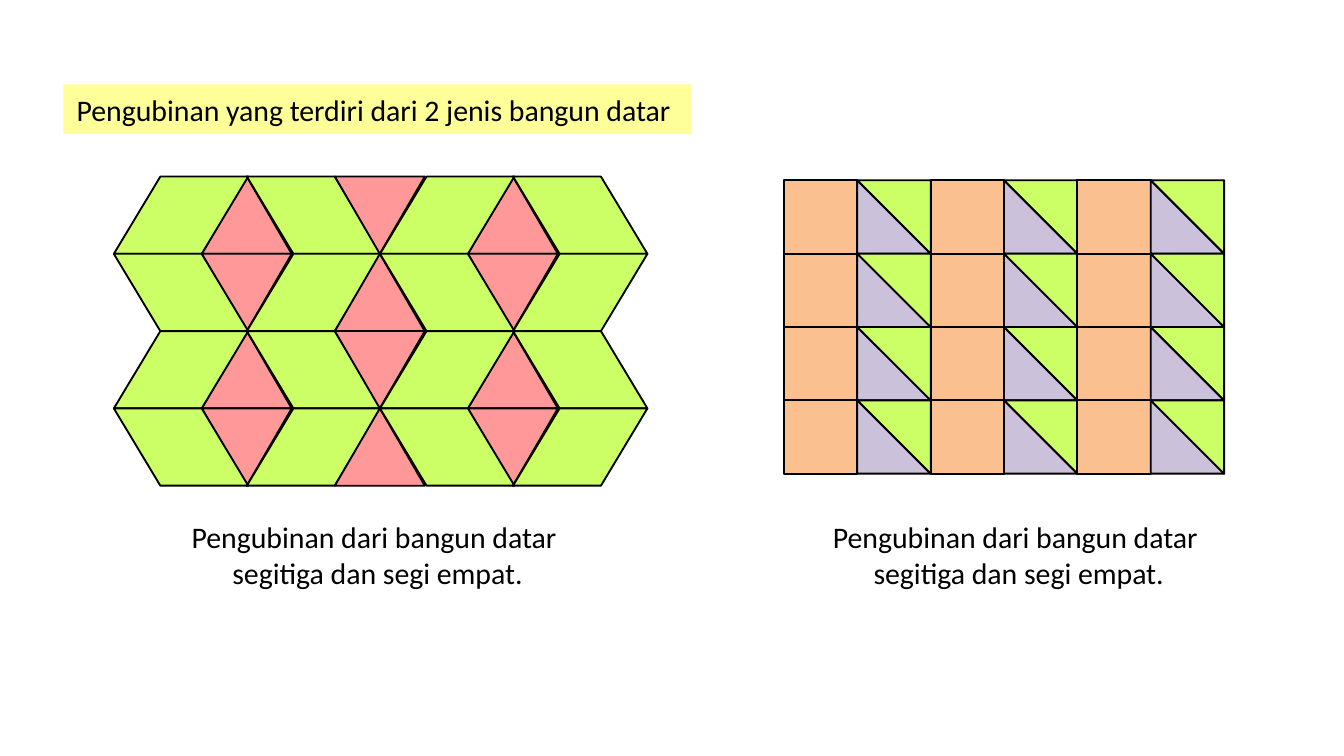
import pptx
import pptx.util
import pptx.dml.color
import pptx.enum.shapes
import pptx.enum.text
import pptx.oxml.ns

Pt = pptx.util.Pt
SHAPE = pptx.enum.shapes.MSO_SHAPE
ALIGN = pptx.enum.text.PP_ALIGN

TITLE = "Pengubinan yang terdiri dari 2 jenis bangun datar"
CAPTION = ["Pengubinan dari bangun datar ", "segitiga dan segi empat."]
CAPTION_LEFTS = [94.3, 437.8]

COLORS = {
    "black": "000000", "yellow": "FFFF99", "pink": "FF9999",
    "green": "CCFF66", "orange": "FAC090", "lilac": "CCC1DA",
}
ROWS = 4

# Left tiling: parallelograms with triangles in the gaps, in drawing order
LEFT_ROW = [("triangle", 0), ("parallelogram", 0), ("parallelogram", 1),
            ("triangle", 1), ("triangle", 2), ("parallelogram", 2),
            ("parallelogram", 3)]
LEFT_TOP, LEFT_ROW_H, LEFT_PITCH = 94.6, 41.4, 71.3
PARALLELOGRAM_X, PARALLELOGRAM_W, SLANT = 61, 72, 0.602
TRIANGLE_X, TRIANGLE_W = 108.1, 48.2

# Right tiling: squares alternating with squares cut into two triangles
RIGHT_X, RIGHT_TOP, SQUARE, PAIRS = 420, 96.6, 39.3, 3


def rgb(name):
    return pptx.dml.color.RGBColor.from_string(COLORS[name])


def add_tile(shapes, kind, x, y, w, h, color, line=True):
    s = shapes.add_shape(kind, Pt(x), Pt(y), Pt(w), Pt(h))
    s.shadow.inherit = False
    s.fill.solid()
    s.fill.fore_color.rgb = rgb(color)
    if line:
        s.line.color.rgb = rgb("black")
        s.line.width = Pt(1)
    else:
        s.line.fill.background()
    return s


def flip(s, horizontal, vertical):
    xfrm = s._element.spPr.find(pptx.oxml.ns.qn("a:xfrm"))
    if horizontal:
        xfrm.set("flipH", "1")
    if vertical:
        xfrm.set("flipV", "1")


def write(s, lines, align, wrap):
    tf = s.text_frame
    tf.word_wrap = wrap
    tf.auto_size = pptx.enum.text.MSO_AUTO_SIZE.SHAPE_TO_FIT_TEXT
    tf.text = "\n".join(lines)
    for p in tf.paragraphs:
        p.alignment = align
        for r in p.runs:
            r.font.name = "Calibri"
            r.font.size = Pt(16)
            r.font.color.rgb = rgb("black")


def add_left_tiling(slide):
    shapes = slide.shapes.add_group_shape().shapes
    for row in range(ROWS):
        y = LEFT_TOP + row * LEFT_ROW_H
        for kind, col in LEFT_ROW:
            dx = col * LEFT_PITCH
            if kind == "triangle":
                s = add_tile(shapes, SHAPE.ISOSCELES_TRIANGLE, TRIANGLE_X + dx, y,
                             TRIANGLE_W, LEFT_ROW_H, "pink")
                flip(s, False, (row + col) % 2)
            else:
                s = add_tile(shapes, SHAPE.PARALLELOGRAM, PARALLELOGRAM_X + dx, y,
                             PARALLELOGRAM_W, LEFT_ROW_H, "green")
                s.adjustments[0] = SLANT
                flip(s, col % 2, row % 2)


def add_right_tiling(slide):
    shapes = slide.shapes.add_group_shape().shapes
    for row in range(ROWS):
        y = RIGHT_TOP + row * SQUARE
        for pair in range(PAIRS):
            x = RIGHT_X + 2 * pair * SQUARE
            cut_x = x + SQUARE
            add_tile(shapes, SHAPE.RECTANGLE, x, y, SQUARE, SQUARE, "orange")
            add_tile(shapes, SHAPE.RIGHT_TRIANGLE, cut_x, y, SQUARE, SQUARE, "lilac")
            s = add_tile(shapes, SHAPE.RIGHT_TRIANGLE, cut_x, y, SQUARE, SQUARE, "green")
            s.rotation = 180


def main():
    prs = pptx.Presentation()
    prs.slide_width, prs.slide_height = Pt(720), Pt(405)
    slide = prs.slides.add_slide(prs.slide_layouts[6])

    title = add_tile(slide.shapes, SHAPE.RECTANGLE, 34, 45.2, 336.2, 26.6,
                     "yellow", line=False)
    write(title, [TITLE], ALIGN.LEFT, True)
    add_left_tiling(slide)
    add_right_tiling(slide)
    for x in CAPTION_LEFTS:
        s = slide.shapes.add_textbox(Pt(x), Pt(274.5), Pt(216), Pt(46))
        write(s, CAPTION, ALIGN.CENTER, False)

    prs.save("out.pptx")


if __name__ == "__main__":
    main()
